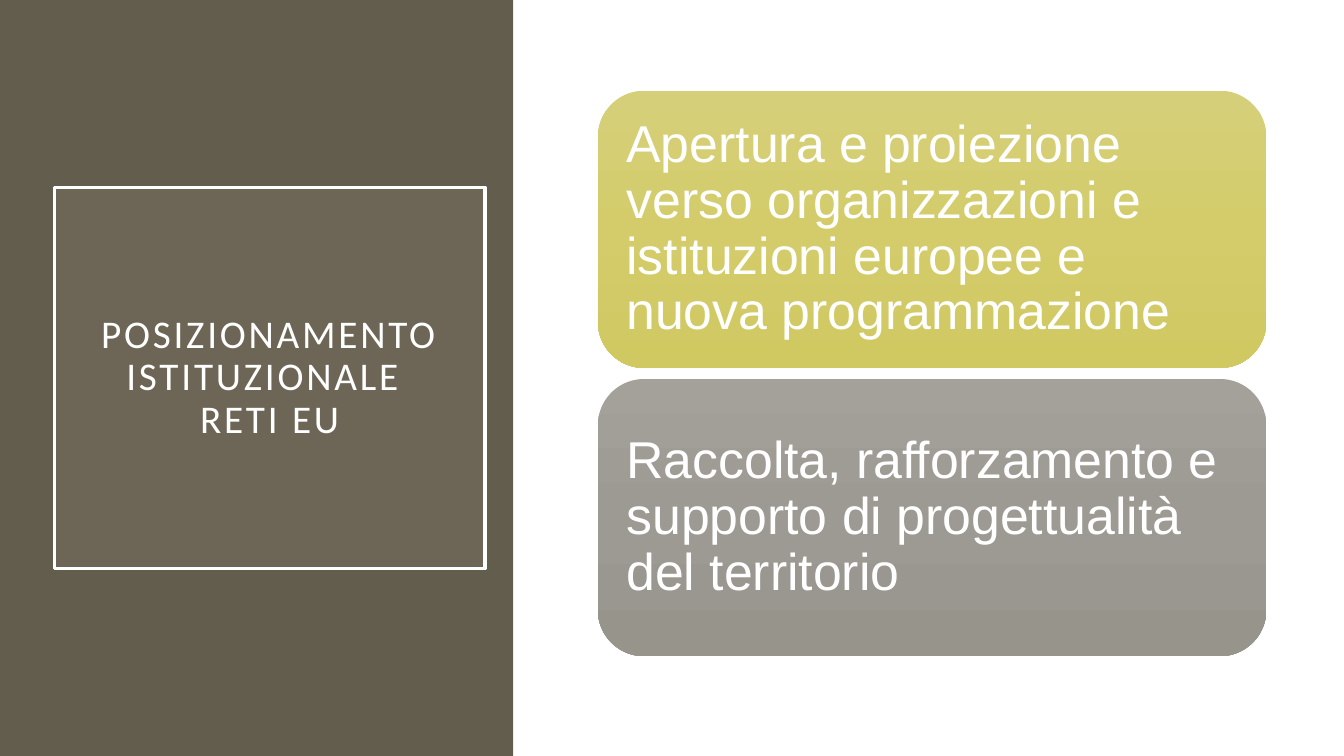
"""Build the slide on institutional positioning and EU networks."""
from copy import deepcopy
from dataclasses import dataclass

from pptx import Presentation
from pptx.dml.color import RGBColor
from pptx.enum.shapes import MSO_SHAPE as Preset
from pptx.enum.text import MSO_ANCHOR as Anchor, PP_ALIGN as Align
from pptx.oxml import parse_xml
from pptx.oxml.ns import nsdecls, qn
from pptx.shapes.autoshape import Shape
from pptx.slide import Slide
from pptx.util import Inches, Pt

WHITE = "FFFFFF"
CARD_TOP, CARD_PITCH = 0.9, 2.86


@dataclass(frozen=True)
class Card:
    text: str
    gradient: tuple[str, str, str]


CARDS = (
    Card("Apertura e proiezione verso organizzazioni e istituzioni europee e nuova programmazione",
         ("D5CF79", "D4CC6A", "D0C861")),
    Card("Raccolta, rafforzamento e supporto di progettualità del territorio",
         ("A4A19B", "9D9A93", "97948C")),
)


def color(value: str) -> RGBColor:
    return RGBColor.from_string(value)


def add_block(slide: Slide, preset: Preset, left: float, top: float,
              width: float, height: float) -> Shape:
    shape = slide.shapes.add_shape(
        preset, Inches(left), Inches(top), Inches(width), Inches(height))
    shape.shadow.inherit = False
    shape.line.fill.background()
    return shape


def fill_solid(shape: Shape, value: str) -> None:
    shape.fill.solid()
    shape.fill.fore_color.rgb = color(value)


def fill_gradient(shape: Shape, values: tuple[str, str, str]) -> None:
    shape.fill.gradient()
    shape.fill.gradient_angle = 270
    first = next(shape.element.spPr.iter(qn("a:gs")))
    first.addnext(deepcopy(first))
    for index, (stop, value) in enumerate(zip(shape.fill.gradient_stops, values)):
        stop.position = index / 2
        stop.color.rgb = color(value)


def write_text(shape: Shape, lines: tuple[str, ...], font_name: str, size: float,
               align: Align, inset: float, spacing: float = 0) -> None:
    frame = shape.text_frame
    frame.word_wrap = True
    frame.vertical_anchor = Anchor.MIDDLE
    frame.margin_left = frame.margin_right = Inches(inset)
    frame.margin_top = frame.margin_bottom = Inches(inset)
    paragraph = frame.paragraphs[0]
    paragraph.alignment = align
    paragraph.line_spacing = 0.9
    for index, line in enumerate(lines):
        if index:
            paragraph.add_line_break()
        run = paragraph.add_run()
        run.text = line
        run.font.name = font_name
        run.font.size = Pt(size)
        run.font.color.rgb = color(WHITE)
        if spacing:
            run.font.element.set("spc", str(int(spacing * 100))) if hasattr(
                run.font, "element") else run._r.get_or_add_rPr().set(
                "spc", str(int(spacing * 100)))


def add_title(slide: Slide) -> None:
    panel = add_block(slide, Preset.RECTANGLE, 0, 0, 5.09, 7.5)
    fill_solid(panel, "635D4D")
    title = add_block(slide, Preset.RECTANGLE, 0.54, 1.86, 4.27, 3.78)
    fill_solid(title, "A7A08E")
    fill_color = next(title.element.spPr.iter(qn("a:srgbClr")))
    fill_color.append(parse_xml(f'<a:alpha {nsdecls("a")} val="15000"/>'))
    title.line.color.rgb = color(WHITE)
    title.line.width = Pt(2.5)
    write_text(title, ("POSIZIONAMENTO ISTITUZIONALE ", "RETI EU"),
               "Calibri", 28, Align.CENTER, 0.2, spacing=2)


def add_card(slide: Slide, card: Card, top: float) -> None:
    shape = add_block(slide, Preset.ROUNDED_RECTANGLE, 5.93, top, 6.63, 2.75)
    fill_gradient(shape, card.gradient)
    write_text(shape, (card.text,), "Arial", 37, Align.LEFT, 0.15)


def main() -> None:
    presentation = Presentation()
    presentation.slide_width = Inches(13.33)
    presentation.slide_height = Inches(7.5)
    slide = presentation.slides.add_slide(presentation.slide_layouts[6])
    add_title(slide)
    for index, card in enumerate(CARDS):
        add_card(slide, card, CARD_TOP + index * CARD_PITCH)
    presentation.save("out.pptx")


if __name__ == "__main__":
    main()
